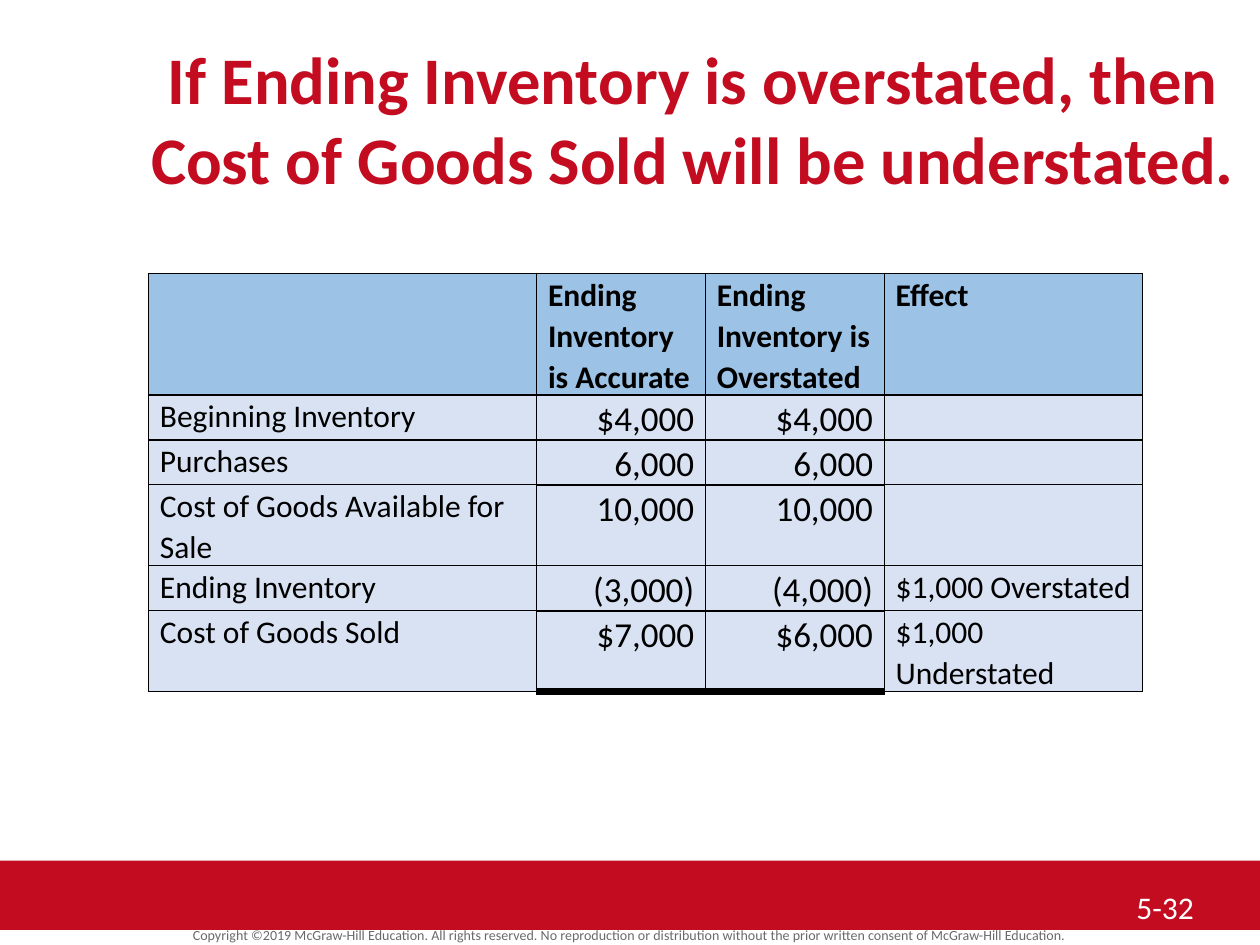
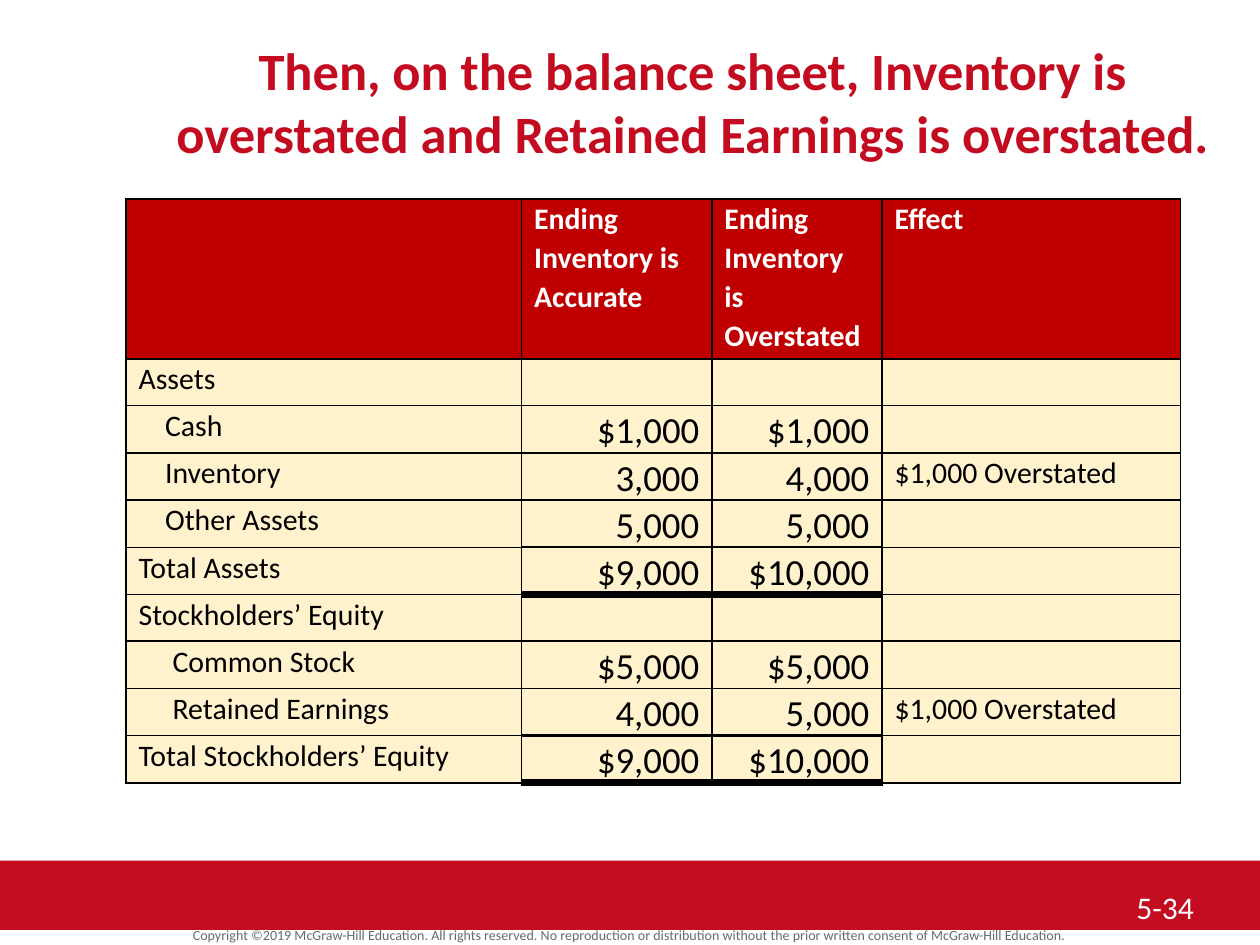
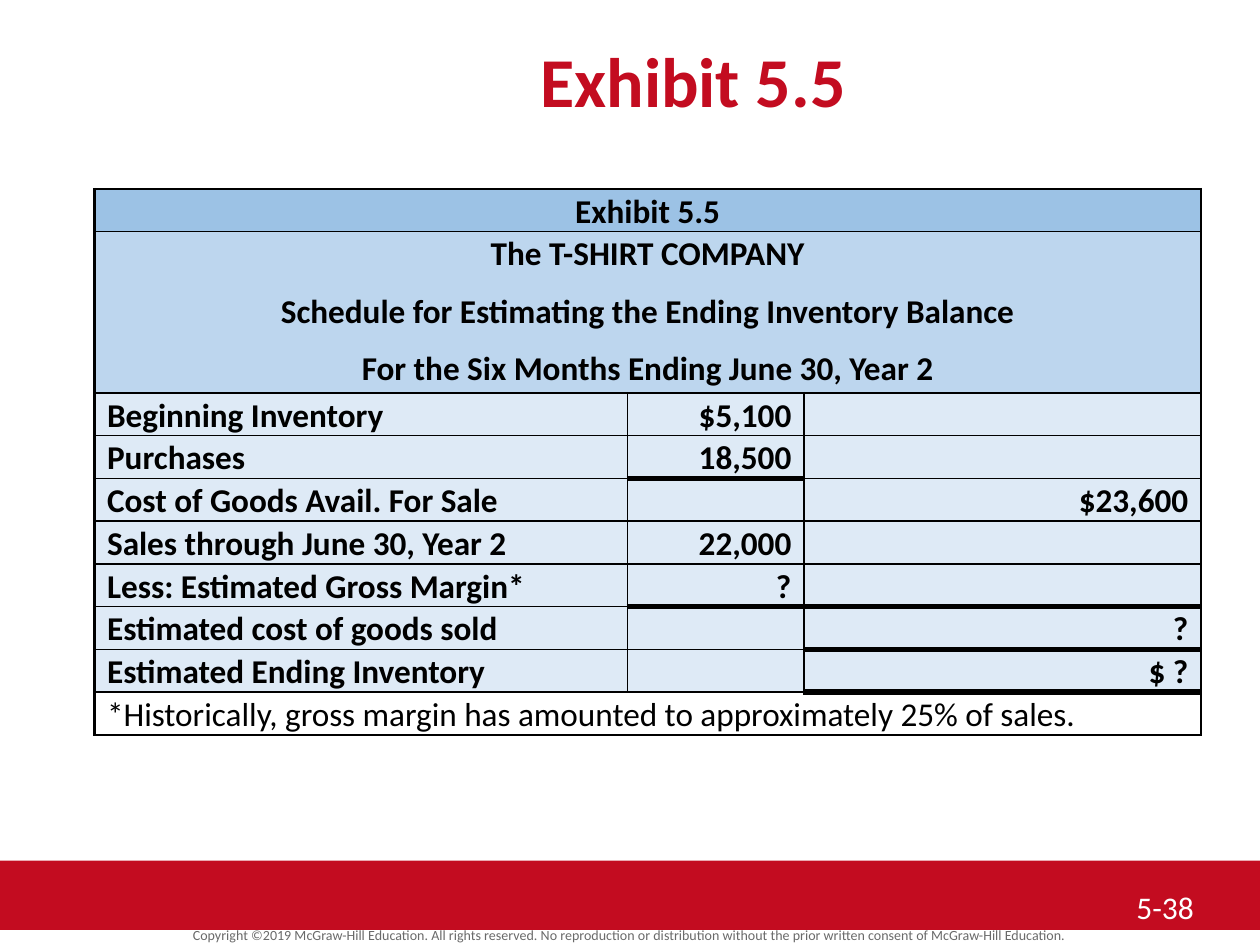
"""Build three slides of inventory tables that share a title style and a footer."""
from dataclasses import dataclass, field

from lxml import etree
from pptx import Presentation
from pptx import util as u
from pptx.dml.color import RGBColor
from pptx.enum import shapes, text
from pptx.oxml.ns import qn

RED = RGBColor(0xC3, 0x0C, 0x20)
BRICK = RGBColor(0xC0, 0x00, 0x00)
CREAM = RGBColor(0xFF, 0xF2, 0xCC)
SKY = RGBColor(0x9C, 0xC2, 0xE5)
MIST = RGBColor(0xBD, 0xD6, 0xEE)
PALE = RGBColor(0xDE, 0xEA, 0xF6)
ICE = RGBColor(0xD9, 0xE2, 0xF3)
GRAY = RGBColor(0x6A, 0x6A, 0x6A)
BLACK = RGBColor(0, 0, 0)
WHITE = RGBColor(0xFF, 0xFF, 0xFF)

FONT = "Calibri"
WIDE, TALL = u.Inches(10), u.Inches(7.5)
COLS, ROWS = 100, 75
LEFT, MID, RIGHT = text.PP_ALIGN.LEFT, text.PP_ALIGN.CENTER, text.PP_ALIGN.RIGHT
LEGAL = ("Copyright ©2019 McGraw-Hill Education. All rights reserved. No reproduction or "
         "distribution without the prior written consent of McGraw-Hill Education.")
HEADS = ("", "Ending Inventory is Accurate", "Ending Inventory is Overstated", "Effect")


def across(count: float) -> int:
    """Return the width of a count of grid columns."""
    return round(WIDE * count / COLS)


def down(count: float) -> int:
    """Return the height of a count of grid rows."""
    return round(TALL * count / ROWS)


@dataclass
class Type:
    """Hold the look of a run and its paragraph."""
    size: float
    ink: RGBColor = BLACK
    bold: bool = False
    align: text.PP_ALIGN = LEFT
    lead: float = 1.0
    after: float = 0


@dataclass
class Sheet:
    """Hold one slide: its title, its page and its table, in grid units."""
    title: str
    size: float
    page: str
    left: float
    top: float
    cols: tuple[float, ...]
    rows: list[float]
    cells: list[tuple[str, ...]]
    fills: list[RGBColor | None]
    body: float
    sums: float
    pad: float
    head: RGBColor = BLACK
    heads: int = 1
    edge: float = 1
    bold: bool = False
    rules: dict[tuple[int, int], float] = field(default_factory=dict)
    dents: dict[int, float] = field(default_factory=dict)


SHEETS = [
    Sheet(
        "If Ending Inventory is overstated, then Cost of Goods Sold will be understated.",
        38, "5-32", 11.8, 21.7, (30.8, 13.4, 14.2, 20.5),
        [9.3, 3.4, 3.4, 6.2, 3.4, 6.2],
        [HEADS,
         ("Beginning Inventory", "$4,000", "$4,000", ""),
         ("Purchases", "6,000", "6,000", ""),
         ("Cost of Goods Available for Sale", "10,000", "10,000", ""),
         ("Ending Inventory", "(3,000)", "(4,000)", "$1,000 Overstated"),
         ("Cost of Goods Sold", "$7,000", "$6,000", "$1,000 Understated")],
        [SKY] + [ICE] * 5, 18, 20, 0.9,
        rules={(r, c): w for r, w in ((2, 1.5), (4, 1.5), (5, 4.5)) for c in (1, 2)},
    ),
    Sheet(
        "Then, on the balance sheet, Inventory is overstated and Retained Earnings "
        "is overstated.",
        30, "5-34", 10, 15.8, (31.4, 15.1, 13.5, 23.7),
        [12.7] + [3.7] * 9,
        [HEADS,
         ("Assets", "", "", ""),
         ("Cash", "$1,000", "$1,000", ""),
         ("Inventory", "3,000", "4,000", "$1,000 Overstated"),
         ("Other Assets", "5,000", "5,000", ""),
         ("Total Assets", "$9,000", "$10,000", ""),
         ("Stockholders’ Equity", "", "", ""),
         ("Common Stock", "$5,000", "$5,000", ""),
         ("Retained Earnings", "4,000", "5,000", "$1,000 Overstated"),
         ("Total Stockholders’ Equity", "$9,000", "$10,000", "")],
        [BRICK] + [CREAM] * 9, 17, 21, 1, head=WHITE,
        rules={(r, c): w for r, w in ((4, 1.5), (5, 4.5), (8, 1.5), (9, 4.5))
               for c in (1, 2)},
        dents={2: 2.1, 3: 2.1, 4: 2.1, 7: 2.7, 8: 2.7},
    ),
    Sheet(
        "Exhibit 5.5", 40, "5-38", 7.5, 15, (42.3, 14, 31.5),
        [3.3, 12.8] + [3.3] * 8,
        [("Exhibit 5.5",),
         ("The T-SHIRT COMPANY\nSchedule for Estimating the Ending Inventory Balance\n"
          "For the Six Months Ending June 30, Year 2",),
         ("Beginning Inventory", "$5,100", ""),
         ("Purchases", "18,500", ""),
         ("Cost of Goods Avail. For Sale", "", "$23,600"),
         ("Sales through June 30, Year 2", "22,000", ""),
         ("Less: Estimated Gross Margin*", "?", ""),
         ("Estimated cost of goods sold", "", "?"),
         ("Estimated Ending Inventory", "", "$ ?"),
         ("*Historically, gross margin has amounted to approximately 25% of sales.",)],
        [SKY, MIST] + [PALE] * 7 + [None], 19, 19, 1, heads=2, edge=1.5, bold=True,
        rules={(1, 0): 1.5, (1, 1): 1.5, (1, 2): 1.5, (3, 1): 3, (6, 1): 3,
               (6, 2): 3, (7, 2): 3, (8, 2): 4.5},
    ),
]


def write(frame, words: str, look: Type) -> None:
    """Fill a text frame with one paragraph per line of words."""
    for num, line in enumerate(words.split("\n")):
        para = frame.add_paragraph() if num else frame.paragraphs[0]
        para.alignment = look.align
        para.line_spacing = look.lead
        para.space_before, para.space_after = u.Pt(0), u.Pt(look.after)
        run = para.add_run()
        run.text = line
        run.font.name, run.font.size = FONT, u.Pt(look.size)
        run.font.bold, run.font.color.rgb = look.bold, look.ink


def label(slide, box: tuple[int, ...], words: str, look: Type, pad: float,
          anchor: text.MSO_ANCHOR) -> None:
    """Add a text box with even side padding."""
    frame = slide.shapes.add_textbox(*box).text_frame
    frame.word_wrap = True
    frame.vertical_anchor = anchor
    frame.margin_left = frame.margin_right = across(pad)
    frame.margin_top = frame.margin_bottom = down(pad / 2)
    write(frame, words, look)


def trim(slide, sheet: Sheet) -> None:
    """Add the band, the legal line, the title and the page number."""
    band = slide.shapes.add_shape(shapes.MSO_SHAPE.RECTANGLE, 0, down(68.3), WIDE, down(5.5))
    band.shadow.inherit = False
    band.fill.solid()
    band.fill.fore_color.rgb = RED
    band.line.fill.background()
    label(slide, (0, down(73.4), WIDE, down(1.9)), LEGAL,
          Type(8, GRAY, align=MID, lead=0.8), 0, text.MSO_ANCHOR.MIDDLE)
    title = slide.shapes.title
    title.left, title.top = across(10), down(2.5)
    title.width, title.height = across(90), down(6.7)
    title.text_frame.auto_size = text.MSO_AUTO_SIZE.NONE
    title.text_frame.vertical_anchor = text.MSO_ANCHOR.TOP
    write(title.text_frame, sheet.title, Type(sheet.size, RED, True, MID))
    label(slide, (across(89.2), down(70), across(9.2), down(4.2)), sheet.page,
          Type(18, WHITE), 1, text.MSO_ANCHOR.TOP)


def border(cell, sides: dict[str, float]) -> None:
    """Draw the black sides of a cell at their widths in points."""
    props = cell._tc.get_or_add_tcPr()
    for side, width in sides.items():
        line = etree.SubElement(props, qn(f"a:ln{side}"), w=str(u.Pt(width)))
        fill = etree.SubElement(line, qn("a:solidFill"))
        etree.SubElement(fill, qn("a:srgbClr"), val=str(BLACK))


def sides(sheet: Sheet, row: int, col: int, span: int) -> dict[str, float]:
    """Work out the four border widths of a cell."""
    last = row == len(sheet.rows) - 1
    end = col + span == len(sheet.cols)
    above = sheet.rules.get((row - 1, col), 1) if row else sheet.edge
    below = sheet.rules.get((row, col), sheet.edge if last else 1)
    return {"L": 1 if col else sheet.edge, "R": sheet.edge if end else 1,
            "T": above, "B": below}


def style(sheet: Sheet, row: int, col: int, span: int) -> Type:
    """Choose the type of a cell from its place in the table."""
    look = Type(sheet.body, bold=sheet.bold, lead=1.07, after=8)
    if row < sheet.heads:
        look.ink, look.bold = sheet.head, True
        look.align = MID if span > 1 else LEFT
    elif span > 1:
        look.bold = False
    elif col in (1, 2):
        look.size, look.align = sheet.sums, RIGHT
    return look


def chart(slide, sheet: Sheet) -> None:
    """Add the table of a sheet."""
    shape = slide.shapes.add_table(
        len(sheet.rows), len(sheet.cols), across(sheet.left), down(sheet.top),
        across(sum(sheet.cols)), down(sum(sheet.rows)))
    table = shape.table
    table.first_row = table.horz_banding = False
    for col, width in zip(table.columns, sheet.cols):
        col.width = across(width)
    for row, line in enumerate(sheet.cells):
        table.rows[row].height = down(sheet.rows[row])
        span = len(sheet.cols) if len(line) == 1 else 1
        if span > 1:
            table.cell(row, 0).merge(table.cell(row, span - 1))
        for col, words in enumerate(line):
            cell = table.cell(row, col)
            border(cell, sides(sheet, row, col, span))
            cell.margin_top = cell.margin_bottom = 0
            dent = 0 if col else sheet.dents.get(row, 0)
            cell.margin_left = across(sheet.pad + dent)
            cell.margin_right = across(sheet.pad)
            if sheet.fills[row] is None:
                cell.fill.background()
            else:
                cell.fill.solid()
                cell.fill.fore_color.rgb = sheet.fills[row]
            if words:
                write(cell.text_frame, words, style(sheet, row, col, span))


def main() -> None:
    """Build and save the slides."""
    deck = Presentation()
    deck.slide_width, deck.slide_height = WIDE, TALL
    for sheet in SHEETS:
        slide = deck.slides.add_slide(deck.slide_layouts[5])
        trim(slide, sheet)
        chart(slide, sheet)
    deck.save("out.pptx")


if __name__ == "__main__":
    main()
